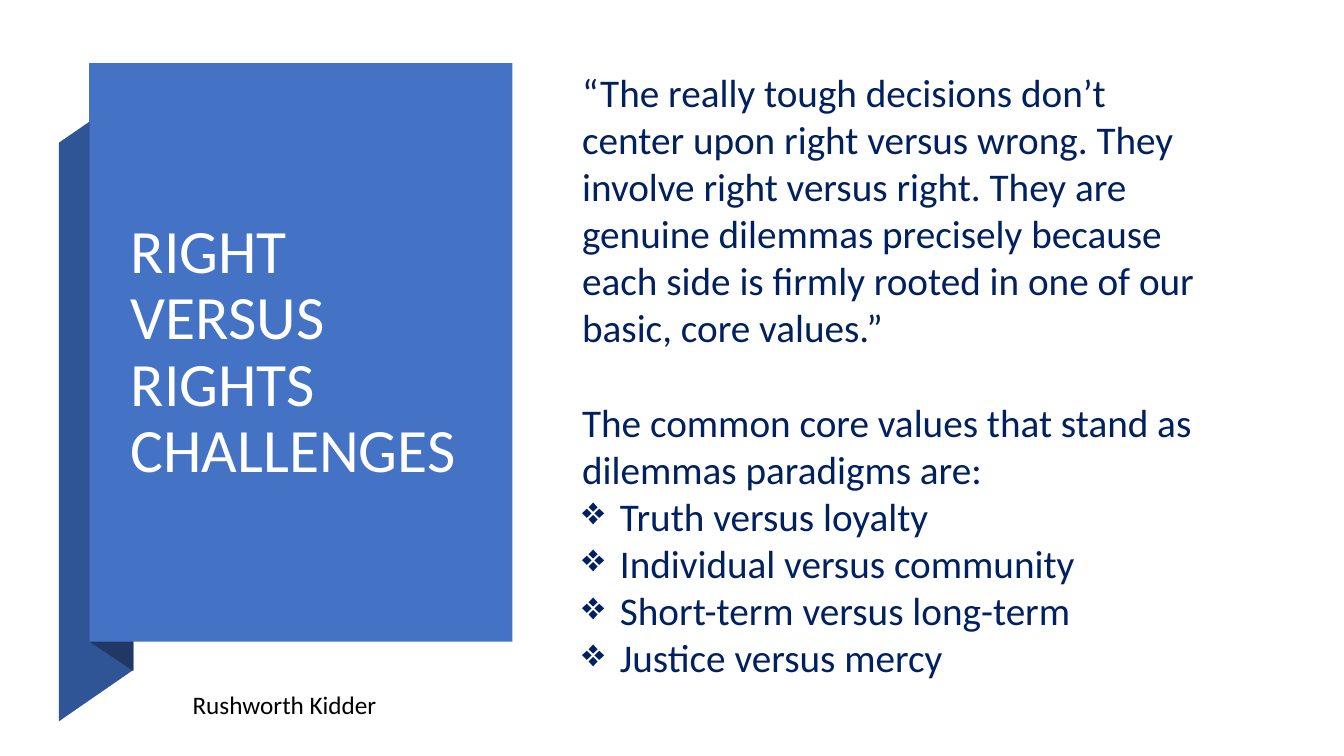
import dataclasses

import pptx
import pptx.dml.color
import pptx.enum.shapes
import pptx.enum.text
import pptx.oxml.ns
import pptx.util
from lxml import etree

PX = 9525  # EMU per px, 96 px to the inch


@dataclasses.dataclass(frozen=True)
class Theme:
    font: str = "Calibri"
    background: str = "FFFFFF"
    panel: str = "4472C4"
    ribbon: str = "2F5597"
    fold: str = "203864"
    title: str = "FFFFFF"
    body: str = "002060"
    caption: str = "000000"
    title_size: int = 44
    body_size: int = 28
    caption_size: int = 18
    paragraph_gap: int = 34


THEME = Theme()

TITLE = "RIGHT VERSUS RIGHTS CHALLENGES"
QUOTE = (
    "“The really tough decisions don’t center upon right versus wrong. "
    "They involve right versus right. They are genuine dilemmas precisely "
    "because each side is firmly rooted in one of our basic, core values.”"
)
PARADIGMS_INTRO = "The common core values that stand as dilemmas paradigms are:"
PARADIGMS = [
    "Truth versus loyalty",
    "Individual versus community",
    "Short-term versus long-term",
    "Justice versus mercy",
]
AUTHOR = "Rushworth Kidder"


def rgb(color):
    return pptx.dml.color.RGBColor.from_string(color)


def paint(shape, color):
    shape.shadow.inherit = False
    shape.fill.solid()
    shape.fill.fore_color.rgb = rgb(color)
    shape.line.fill.background()


def add_outline(slide, points, color):
    builder = slide.shapes.build_freeform(*points[0], scale=PX)
    builder.add_line_segments(points[1:], close=True)
    paint(builder.convert_to_shape(), color)


def add_text(slide, box, lines, size, color):
    frame = slide.shapes.add_textbox(*(length * PX for length in box)).text_frame
    frame.word_wrap = True
    frame.text = "\n".join(lines)
    for paragraph in frame.paragraphs:
        for run in paragraph.runs:
            run.font.name = THEME.font
            run.font.size = pptx.util.Pt(size)
            run.font.color.rgb = rgb(color)
    return frame


def add_bullet(paragraph, indent):
    properties = paragraph._p.get_or_add_pPr()
    properties.set("marL", str(indent * PX))
    properties.set("indent", str(-indent * PX))
    bullet = etree.SubElement(properties, pptx.oxml.ns.qn("a:buChar"))
    bullet.set("char", "❖")


def add_title_panel(slide, box):
    """Title on a panel with a ribbon folded behind its left edge."""
    left, top, width, height = box
    bottom = top + height
    ribbon_left, ribbon_right = left - 29, left + 42
    add_outline(slide, [
        (ribbon_left, bottom + 76), (ribbon_right, bottom + 27),
        (ribbon_right, top + 27), (ribbon_left, top + 76),
    ], THEME.ribbon)
    add_outline(slide, [
        (left, bottom), (ribbon_right, bottom + 28),
        (ribbon_right, top + 27), (left, top),
    ], THEME.fold)
    panel = slide.shapes.add_shape(
        pptx.enum.shapes.MSO_SHAPE.RECTANGLE, *(length * PX for length in box))
    paint(panel, THEME.panel)

    title_box = (left + 30, top + 33, width - 64, height - 65)
    title = add_text(slide, title_box, [TITLE], THEME.title_size, THEME.title)
    title.vertical_anchor = pptx.enum.text.MSO_ANCHOR.MIDDLE
    title.paragraphs[0].line_spacing = 0.9


def add_dilemmas(slide, box):
    lines = [QUOTE, PARADIGMS_INTRO, *PARADIGMS]
    dilemmas = add_text(slide, box, lines, THEME.body_size, THEME.body)
    dilemmas.paragraphs[1].space_before = pptx.util.Pt(THEME.paragraph_gap)
    for paradigm in dilemmas.paragraphs[2:]:
        add_bullet(paradigm, 36)


def add_author(slide, box):
    add_text(slide, box, [AUTHOR], THEME.caption_size, THEME.caption)


def main():
    deck = pptx.Presentation()
    deck.slide_width, deck.slide_height = 1280 * PX, 720 * PX
    slide = deck.slides.add_slide(deck.slide_layouts[6])
    slide.background.fill.solid()
    slide.background.fill.fore_color.rgb = rgb(THEME.background)
    add_title_panel(slide, (85, 60, 403, 551))
    add_dilemmas(slide, (545, 60, 603, 598))
    add_author(slide, (174, 652, 328, 38))
    deck.save("out.pptx")


if __name__ == "__main__":
    main()
